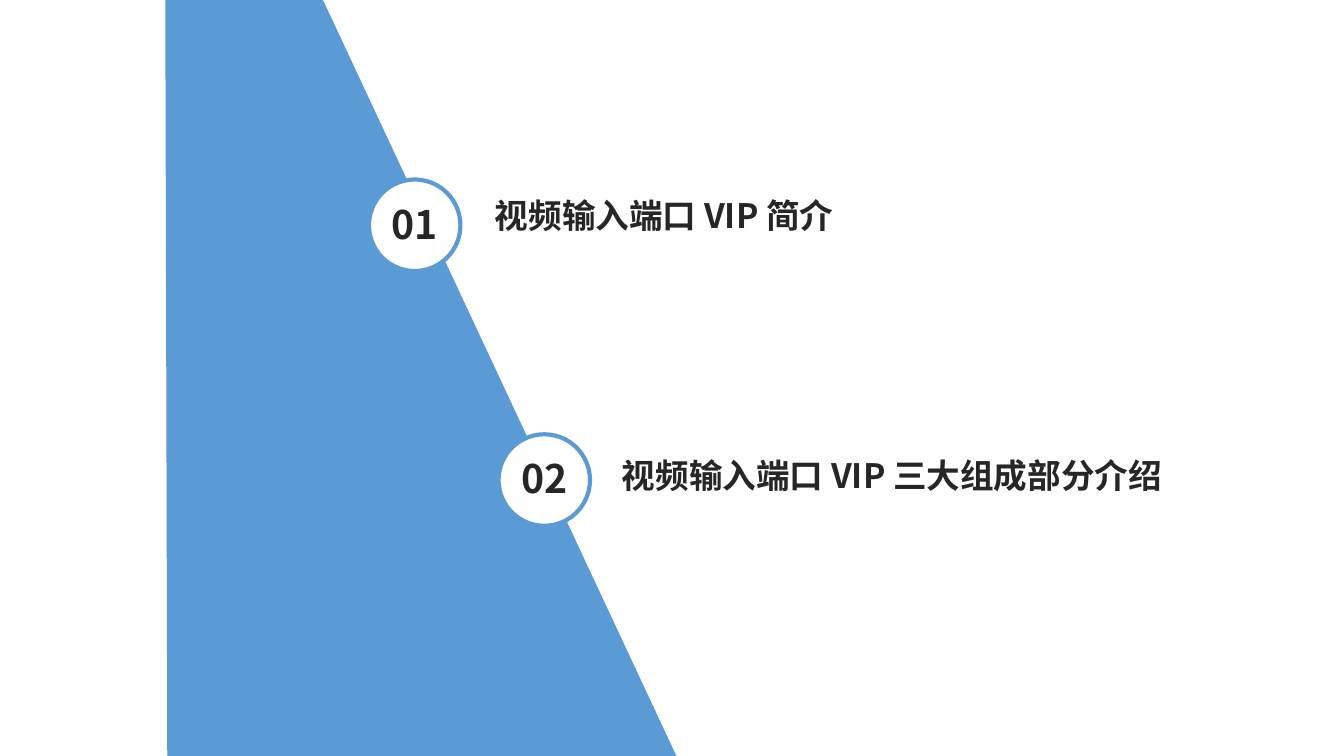
from dataclasses import dataclass

from lxml import etree
from pptx import Presentation
from pptx import util as u
from pptx.dml.color import RGBColor
from pptx.enum import shapes, text
from pptx.oxml.ns import qn

FONT = "Noto Sans CJK SC"
BLUE, WHITE, INK = "5B9BD5", "FFFFFF", "262626"
W, H = u.Inches(13.33), u.Inches(7.5)
BADGE_W, BADGE_H = 6.8, 12.1
LABEL_W, LABEL_H = 5.55, 8
HEADING_H = 6.67
BAND = [(50.33, 100), (24, -0.13), (12.3, -0.13), (12.45, 100.53)]


@dataclass
class Entry:
    number: str
    title: str
    x: float
    y: float
    title_x: float
    title_y: float
    title_w: float


ENTRIES = [
    Entry("01", "视频输入端口 VIP 简介", 30.86, 29.8, 36.08, 28.4, 45.83),
    Entry("02", "视频输入端口 VIP 三大组成部分介绍", 40.5, 63.5, 45.53, 62.8, 48.83),
]


def rgb(color: str) -> RGBColor:
    return RGBColor.from_string(color)


def px(share: float) -> int:
    return round(W * share / 100)


def py(share: float) -> int:
    return round(H * share / 100)


def box(left: float, mid: float, width: float, height: float) -> tuple:
    return px(left), py(mid - height / 2), px(width), py(height)


def add_text(parent, words: str, area: tuple, size: int, align) -> None:
    tf = parent.add_textbox(*area).text_frame
    tf.word_wrap = True
    tf.auto_size = text.MSO_AUTO_SIZE.SHAPE_TO_FIT_TEXT
    p = tf.paragraphs[0]
    p.alignment = align
    r = p.add_run()
    r.text = words
    p.font.size = u.Pt(size)
    p.font.bold = True
    p.font.name = FONT
    p.font.color.rgb = rgb(INK)
    etree.SubElement(p.font._element, qn("a:ea"), typeface=FONT)


def add_band(s) -> None:
    points = [(px(x), py(y)) for x, y in BAND]
    fb = s.shapes.build_freeform(*points[0])
    fb.add_line_segments(points[1:], close=True)
    sp = fb.convert_to_shape()
    sp.shadow.inherit = False
    sp.fill.solid()
    sp.fill.fore_color.rgb = rgb(BLUE)
    sp.line.fill.background()


def add_entry(s, e: Entry) -> None:
    group = s.shapes.add_group_shape().shapes
    sp = group.add_shape(shapes.MSO_SHAPE.OVAL,
                         *box(e.x - BADGE_W / 2, e.y, BADGE_W, BADGE_H))
    sp.shadow.inherit = False
    sp.fill.solid()
    sp.fill.fore_color.rgb = rgb(WHITE)
    sp.line.color.rgb = rgb(BLUE)
    sp.line.width = u.Pt(3)
    add_text(group, e.number, box(e.x - LABEL_W / 2, e.y, LABEL_W, LABEL_H),
             28, text.PP_ALIGN.CENTER)
    add_text(s.shapes, e.title, box(e.title_x, e.title_y, e.title_w, HEADING_H),
             24, text.PP_ALIGN.LEFT)


def main() -> None:
    prs = Presentation()
    prs.slide_width, prs.slide_height = W, H
    s = prs.slides.add_slide(prs.slide_layouts[6])
    add_band(s)
    for e in ENTRIES:
        add_entry(s, e)
    prs.save("out.pptx")


if __name__ == "__main__":
    main()
